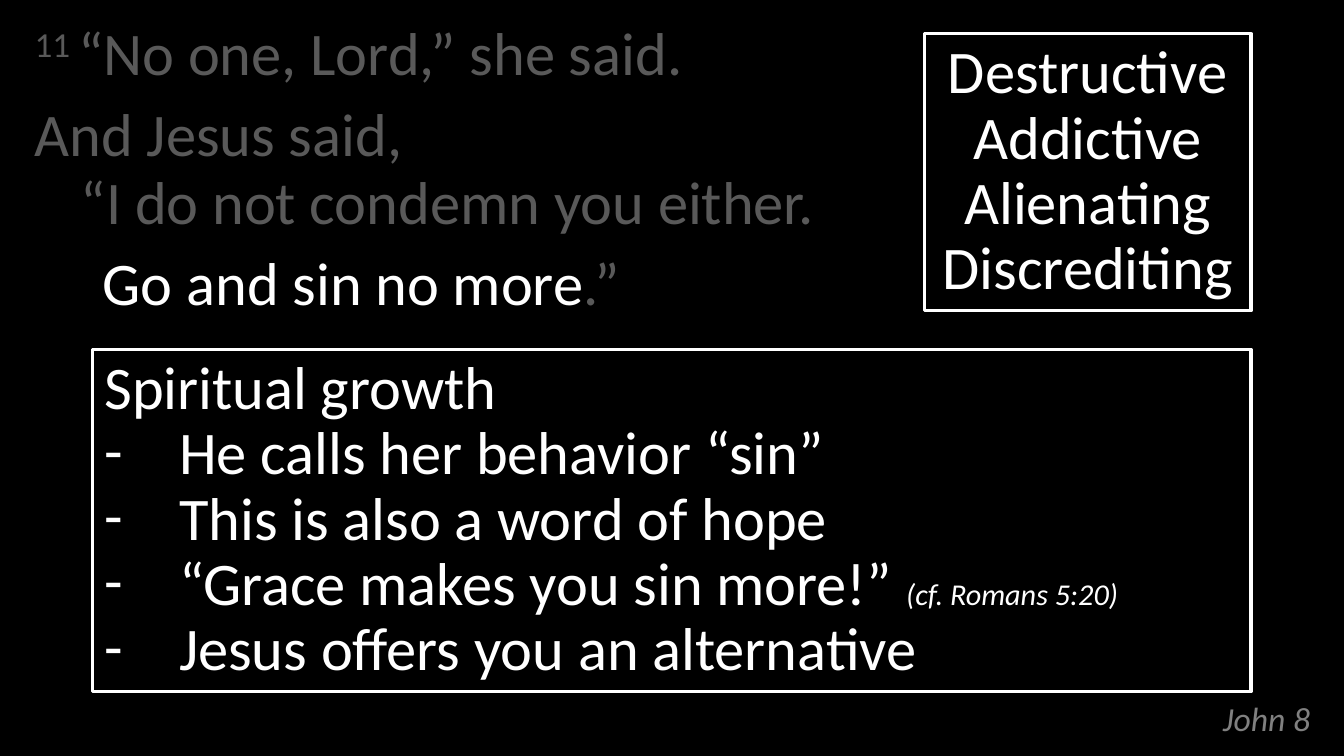
"""Build a Bible study slide: a verse, a word list and notes on growth."""
from lxml.etree import SubElement
from pptx import Presentation
from pptx.dml.color import RGBColor
from pptx.enum.shapes import MSO_SHAPE
from pptx.enum.text import MSO_ANCHOR, PP_ALIGN
from pptx.oxml.ns import qn
from pptx.util import Cm, Pt

SIZE = (28.22, 15.88)
SOURCE = [[("John 8", "source")]]
VERSE = [
    [("11 ", "number"), ("“No one, Lord,” she said.", "verse")],
    [("And Jesus said,\n“I do not condemn you either.", "verse")],
    [("Go and sin no more", "main"), (".”", "verse")],
]
TRAITS = ["Destructive", "Addictive", "Alienating", "Discrediting"]
HEAD = "Spiritual growth"
POINTS = [
    [("He calls her behavior “sin”", "main")],
    [("This is also a word of hope", "main")],
    [("“Grace makes you sin more!” ", "main"), ("(cf. Romans 5:20)", "note")],
    [("Jesus offers you an alternative", "main")],
]
THEME = {
    "font": "Calibri",
    "back": RGBColor(0, 0, 0),
    "line": RGBColor(255, 255, 255),
    "styles": {
        "main": (36, RGBColor(255, 255, 255), False),
        "verse": (36, RGBColor(89, 89, 89), False),
        "number": (36, RGBColor(89, 89, 89), False),
        "note": (18, RGBColor(255, 255, 255), True),
        "source": (20, RGBColor(128, 128, 128), True),
    },
}
RIGHT = 26.27
BOX = {"traits": (6.86, 0.71, 5.82), "growth": (24.33, 7.34, 7.19)}


def add_run(para, text, style):
    """Add one styled run to a paragraph."""
    run = para.add_run()
    run.text = text
    size, color, slant = THEME["styles"][style]
    form = {"name": THEME["font"], "size": Pt(size), "italic": slant}
    for key, value in form.items():
        setattr(run.font, key, value)
    run.font.color.rgb = color
    if style == "number":
        run.font._element.set("baseline", "30000")


def fill_text(shape, paras, anchor, form, indents, bullets=()):
    """Write paragraphs with (left, first) indents in centimetres."""
    frame = shape.text_frame
    frame.word_wrap = True
    frame.vertical_anchor = anchor
    for row, (runs, (left, first)) in enumerate(zip(paras, indents)):
        para = frame.add_paragraph() if row else frame.paragraphs[0]
        for key, value in form.items():
            setattr(para, key, value)
        props = para._p.get_or_add_pPr()
        props.set("marL", str(Cm(left)))
        props.set("indent", str(Cm(first)))
        if row in bullets:
            SubElement(props, qn("a:buFont")).set("typeface", THEME["font"])
            SubElement(props, qn("a:buChar")).set("char", "-")
        for text, style in runs:
            for part, line in enumerate(text.split("\n")):
                if part:
                    para.add_line_break()
                add_run(para, line, style)


def add_box(slide, name):
    """Draw a black panel with a white outline, flush with the right edge."""
    width, top, height = BOX[name]
    place = map(Cm, (RIGHT - width, top, width, height))
    box = slide.shapes.add_shape(MSO_SHAPE.RECTANGLE, *place)
    box.shadow.inherit = False
    box.fill.solid()
    box.fill.fore_color.rgb = THEME["back"]
    box.line.color.rgb = THEME["line"]
    box.line.width = Pt(2)
    return box


def main():
    """Put the slide together and save it."""
    deck = Presentation()
    deck.slide_width, deck.slide_height = map(Cm, SIZE)
    slide = deck.slides.add_slide(deck.slide_layouts[6])
    slide.background.fill.solid()
    slide.background.fill.fore_color.rgb = THEME["back"]

    source = slide.shapes.add_textbox(*map(Cm, (17.93, 14.12, 9.83, 1.5)))
    fill_text(source, SOURCE, MSO_ANCHOR.BOTTOM,
              {"alignment": PP_ALIGN.RIGHT, "line_spacing": 0.8}, [(0, 0)])

    verse = slide.shapes.add_textbox(*map(Cm, (0.48, 0.3, 27.28, 13.44)))
    fill_text(verse, VERSE, MSO_ANCHOR.TOP,
              {"line_spacing": 0.95, "space_before": Pt(7)},
              [(0.97, -0.97), (0.97, -0.97), (1.43, 0)])

    growth = [[(HEAD, "main")]] + POINTS
    fill_text(add_box(slide, "growth"), growth, MSO_ANCHOR.MIDDLE,
              {"alignment": PP_ALIGN.LEFT, "line_spacing": 0.9},
              [(0.48, -0.48)] + [(1.57, -1.57)] * len(POINTS),
              range(1, len(growth)))

    traits = [[(word, "main")] for word in TRAITS]
    fill_text(add_box(slide, "traits"), traits, MSO_ANCHOR.MIDDLE,
              {"alignment": PP_ALIGN.CENTER, "line_spacing": 0.9},
              [(0.48, -0.48)] * len(TRAITS))
    deck.save("out.pptx")


if __name__ == "__main__":
    main()
